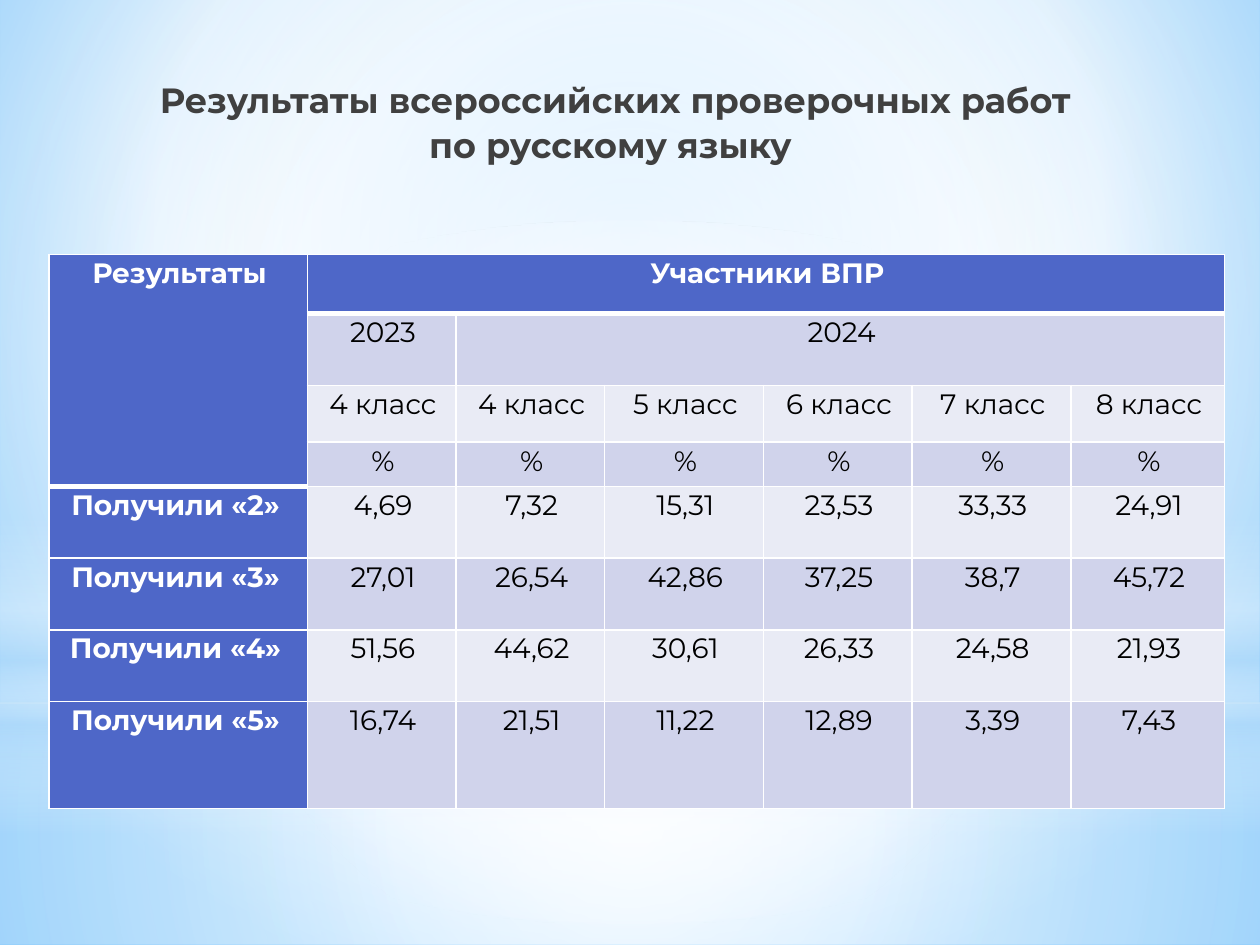
from lxml import etree
from pptx import Presentation
from pptx.dml.color import RGBColor
from pptx.enum.shapes import MSO_SHAPE
from pptx.enum.text import MSO_ANCHOR, PP_ALIGN
from pptx.oxml.ns import qn
from pptx.util import Inches, Pt

FONT = "Montserrat"
BLUE, LILAC, PALE = "4E67C8", "D0D3EB", "E9EBF5"
CENTRE = (50, 50, 50, 50)


def paint_gradient(owner, stops, focus=None):
    """Give owner's gradient fill (colour, position, opacity) stops: circular around focus, else top to bottom."""
    gradient = next(owner.iter(qn("a:gradFill")))
    for child in list(gradient):
        gradient.remove(child)
    stop_list = etree.SubElement(gradient, qn("a:gsLst"))
    for color, position, opacity in stops:
        stop = etree.SubElement(stop_list, qn("a:gs"), pos=str(position * 1000))
        rgb = etree.SubElement(stop, qn("a:srgbClr"), val=color)
        if opacity < 100:
            etree.SubElement(rgb, qn("a:alpha"), val=str(opacity * 1000))
    if focus:
        circle = etree.SubElement(gradient, qn("a:path"), path="circle")
        sides = {side: str(share * 1000) for side, share in zip("ltrb", focus)}
        etree.SubElement(circle, qn("a:fillToRect"), **sides)
    else:
        etree.SubElement(gradient, qn("a:lin"), ang="5400000", scaled="0")


def style_text(frame, size, color, bold, line_spacing):
    paragraph = frame.paragraphs[0]
    paragraph.alignment = PP_ALIGN.CENTER
    paragraph.line_spacing = line_spacing
    paragraph.space_after = Pt(8)
    for run in paragraph.runs:
        run.font.name = FONT
        run.font.size = Pt(size)
        run.font.bold = bold
        run.font.color.rgb = RGBColor.from_string(color)


prs = Presentation()
prs.slide_width, prs.slide_height = Inches(10), Inches(7.5)
slide = prs.slides.add_slide(prs.slide_layouts[6])

# Sky background and its soft light layers
slide.background.fill.gradient()
paint_gradient(slide.element, [("9ED5FF", 0, 100), ("FFFFFF", 60, 100), ("5BB9FF", 100, 100)],
               (20, 10, 20, 60))

light_layers = [
    (MSO_SHAPE.RECTANGLE, 5.58, 1.92,
     [("FFFFFF", 0, 91), ("FFFFFF", 37, 76), ("B4DCFA", 100, 79)], CENTRE),
    (MSO_SHAPE.RECTANGLE, 0, 5.58,
     [("FFFFFF", 0, 89), ("FFFFFF", 48, 62), ("B4DCFA", 100, 79)], CENTRE),
    (MSO_SHAPE.RECTANGLE, 4.12, 2.5,
     [("FFFFFF", 0, 0), ("FFFFFF", 29, 30), ("B4DCFA", 45, 40),
      ("FFFFFF", 55, 26), ("B4DCFA", 65, 60), ("FFFFFF", 100, 0)], None),
    (MSO_SHAPE.OVAL, 1.75, 5.58, [("FFFFFF", 0, 100), ("FFFFFF", 56, 0)], CENTRE),
]
for outline, top, height, stops, focus in light_layers:
    layer = slide.shapes.add_shape(outline, 0, Inches(top), Inches(10), Inches(height))
    layer.shadow.inherit = False
    layer.line.fill.background()
    layer.fill.gradient()
    paint_gradient(layer.element, stops, focus)

title = slide.shapes.add_textbox(Inches(0.75), Inches(0.52), Inches(8.27), Inches(0.87)).text_frame
title.word_wrap = True
title.vertical_anchor = MSO_ANCHOR.MIDDLE
title.text = "Результаты всероссийских проверочных работ\vпо русскому языку "
style_text(title, 20, "404040", True, 1.07)

# Results table; None marks a cell covered by a merge
column_widths = [2.05, 1.18, 1.18, 1.26, 1.18, 1.26, 1.22]
row_heights = [0.47, 0.57, 0.45, 0.35, 0.57, 0.57, 0.57, 0.85]
results = [
    ["Результаты", "Участники ВПР", None, None, None, None, None],
    [None, "2023", "2024", None, None, None, None],
    [None, "4 класс", "4 класс", "5 класс", "6 класс", "7 класс", "8 класс"],
    [None] + ["%"] * 6,
    ["Получили «2» ", "4,69", "7,32", "15,31", "23,53", "33,33", "24,91"],
    ["Получили «3» ", "27,01", "26,54", "42,86", "37,25", "38,7", "45,72"],
    ["Получили «4» ", "51,56", "44,62", "30,61", "26,33", "24,58", "21,93"],
    ["Получили «5» ", "16,74", "21,51", "11,22", "12,89", "3,39", "7,43"],
]
table = slide.shapes.add_table(len(results), len(column_widths), Inches(0.39), Inches(2.02),
                               Inches(sum(column_widths)), Inches(sum(row_heights))).table
for column, width in zip(table.columns, column_widths):
    column.width = Inches(width)
for row, height in zip(table.rows, row_heights):
    row.height = Inches(height)
for first, last in [((0, 0), (3, 0)), ((0, 1), (0, 6)), ((1, 2), (1, 6))]:
    table.cell(*first).merge(table.cell(*last))

for r, texts in enumerate(results):
    for c, text in enumerate(texts):
        cell = table.cell(r, c)
        is_header = r == 0 or c == 0
        cell.margin_left, cell.margin_right = Inches(0.07), Inches(0.05)
        cell.margin_top = cell.margin_bottom = 0
        cell.fill.solid()
        cell.fill.fore_color.rgb = RGBColor.from_string(BLUE if is_header else LILAC if r % 2 else PALE)
        if text:
            cell.text_frame.text = text
            style_text(cell.text_frame, 16, "FFFFFF" if is_header else "000000", is_header, 1.06)

        # A thicker rule closes the header row and the merged corner
        header_rows = 4 if c == 0 else 1
        border_widths = {"L": 1, "R": 1, "T": 3 if r == header_rows else 1,
                         "B": 3 if r < header_rows else 1}
        properties = cell._tc.get_or_add_tcPr()
        for order, (side, width) in enumerate(border_widths.items()):
            border = etree.Element(qn(f"a:ln{side}"), w=str(Pt(width)))
            line_fill = etree.SubElement(border, qn("a:solidFill"))
            etree.SubElement(line_fill, qn("a:srgbClr"), val="FFFFFF")
            properties.insert(order, border)

prs.save("out.pptx")
